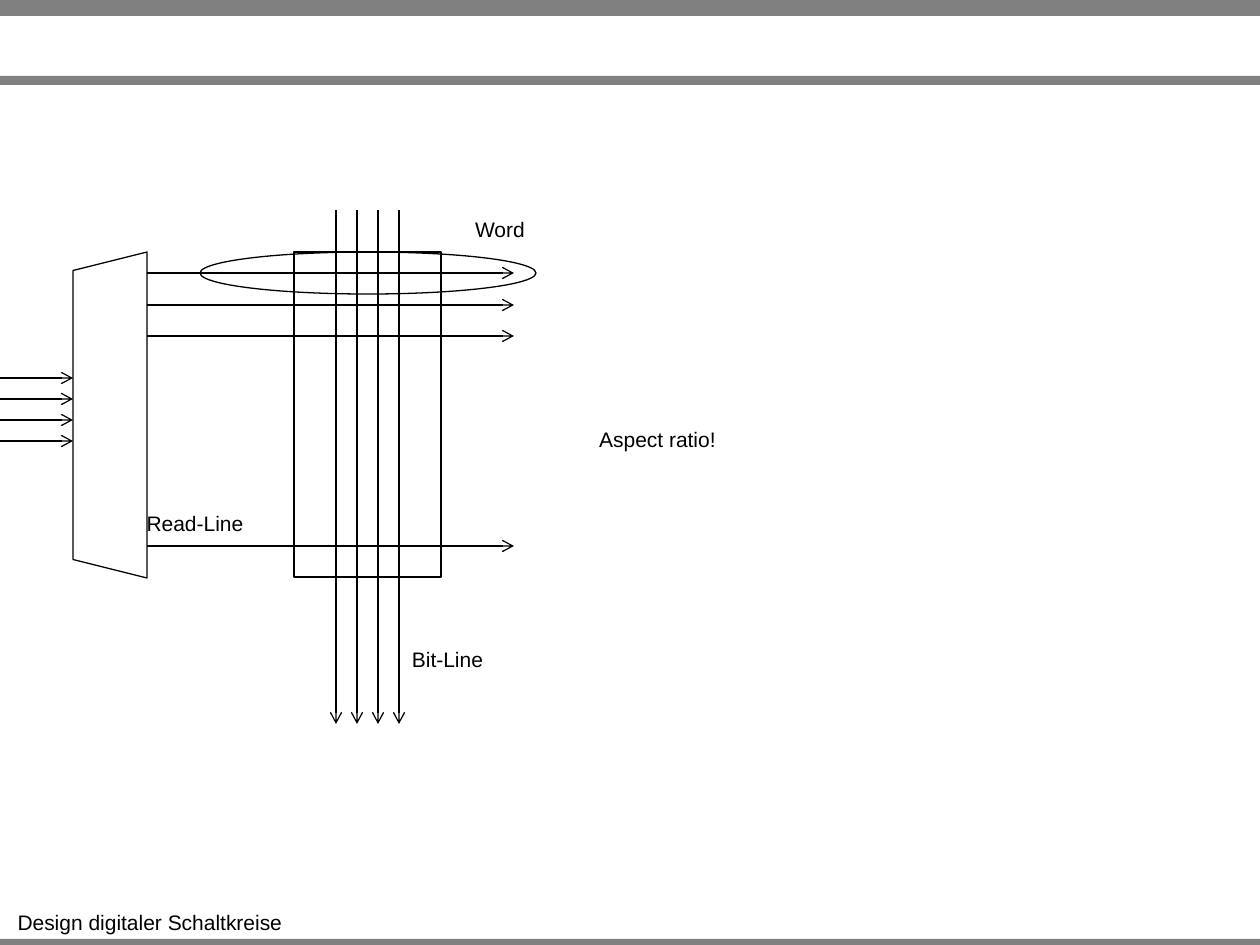
from lxml import etree
from pptx import Presentation
from pptx import util as u
from pptx.dml.color import RGBColor
from pptx.enum import shapes, text
from pptx.oxml.ns import qn

EMU_PER_PX = 914400 / 126
BLACK, GREY = "000000", "808080"
KIND = shapes.MSO_SHAPE


def px(*lengths):
    """Turn px lengths into EMU."""
    return [u.Emu(round(length * EMU_PER_PX)) for length in lengths]


def color(value):
    return RGBColor.from_string(value)


class Sketch:
    font = {"name": "Arial", "size": u.Pt(12)}
    line_width = u.Pt(0.75)

    def __init__(self, page):
        self.page = page

    def stroke(self, line):
        line.color.rgb = color(BLACK)
        line.width = self.line_width

    def bar(self, top, height):
        """Grey band over the full slide width."""
        box = self.page.shapes.add_shape(KIND.RECTANGLE, *px(0, top, 1260, height))
        box.shadow.inherit = False
        box.fill.solid()
        box.fill.fore_color.rgb = color(GREY)
        box.line.fill.background()

    def outline(self, kind, left, top, width, height, rotation=0):
        box = self.page.shapes.add_shape(kind, *px(left, top, width, height))
        box.shadow.inherit = False
        box.rotation = rotation
        box.fill.background()
        self.stroke(box.line)

    def arrow(self, x1, y1, x2, y2):
        line = self.page.shapes.add_connector(
            shapes.MSO_CONNECTOR.STRAIGHT, *px(x1, y1, x2, y2))
        self.stroke(line.line)
        etree.SubElement(line.line._get_or_add_ln(), qn("a:tailEnd"), type="arrow")
        etree.SubElement(line._element.spPr, qn("a:effectLst"))

    def label(self, words, left, top, width):
        box = self.page.shapes.add_textbox(*px(left, top, width, 38))
        frame = box.text_frame
        frame.word_wrap = False
        frame.auto_size = text.MSO_AUTO_SIZE.SHAPE_TO_FIT_TEXT
        para = frame.paragraphs[0]
        para.alignment = text.PP_ALIGN.CENTER
        span = para.add_run()
        span.text = words
        for key, value in self.font.items():
            setattr(span.font, key, value)
        span.font.color.rgb = color(BLACK)


def main():
    deck = Presentation()
    deck.slide_width, deck.slide_height = px(1260, 945)
    sketch = Sketch(deck.slides.add_slide(deck.slide_layouts[6]))

    for top, height in ((939, 10), (0, 16), (76, 9)):
        sketch.bar(top, height)
    sketch.label("Design digitaler Schaltkreise", 4, 903, 292)

    # Memory array with its bit lines and read lines
    sketch.outline(KIND.RECTANGLE, 294, 252, 147, 325)
    for x in range(336, 400, 21):
        sketch.arrow(x, 210, x, 724)
    sketch.label("Bit-Line", 399, 640, 97)
    for y in (273, 305, 336, 546):
        sketch.arrow(147, y, 514, y)
    sketch.label("Read-Line", 134, 504, 122)
    sketch.outline(KIND.OVAL, 200, 252, 336, 42)
    sketch.label("Word", 462, 210, 76)

    # Address decoder with its inputs
    sketch.outline(KIND.TRAPEZOID, -53, 378, 326, 74, rotation=270)
    for y in range(378, 442, 21):
        sketch.arrow(0, y, 73, y)
    sketch.label("Aspect ratio!", 586, 420, 143)

    deck.save("out.pptx")


if __name__ == "__main__":
    main()
